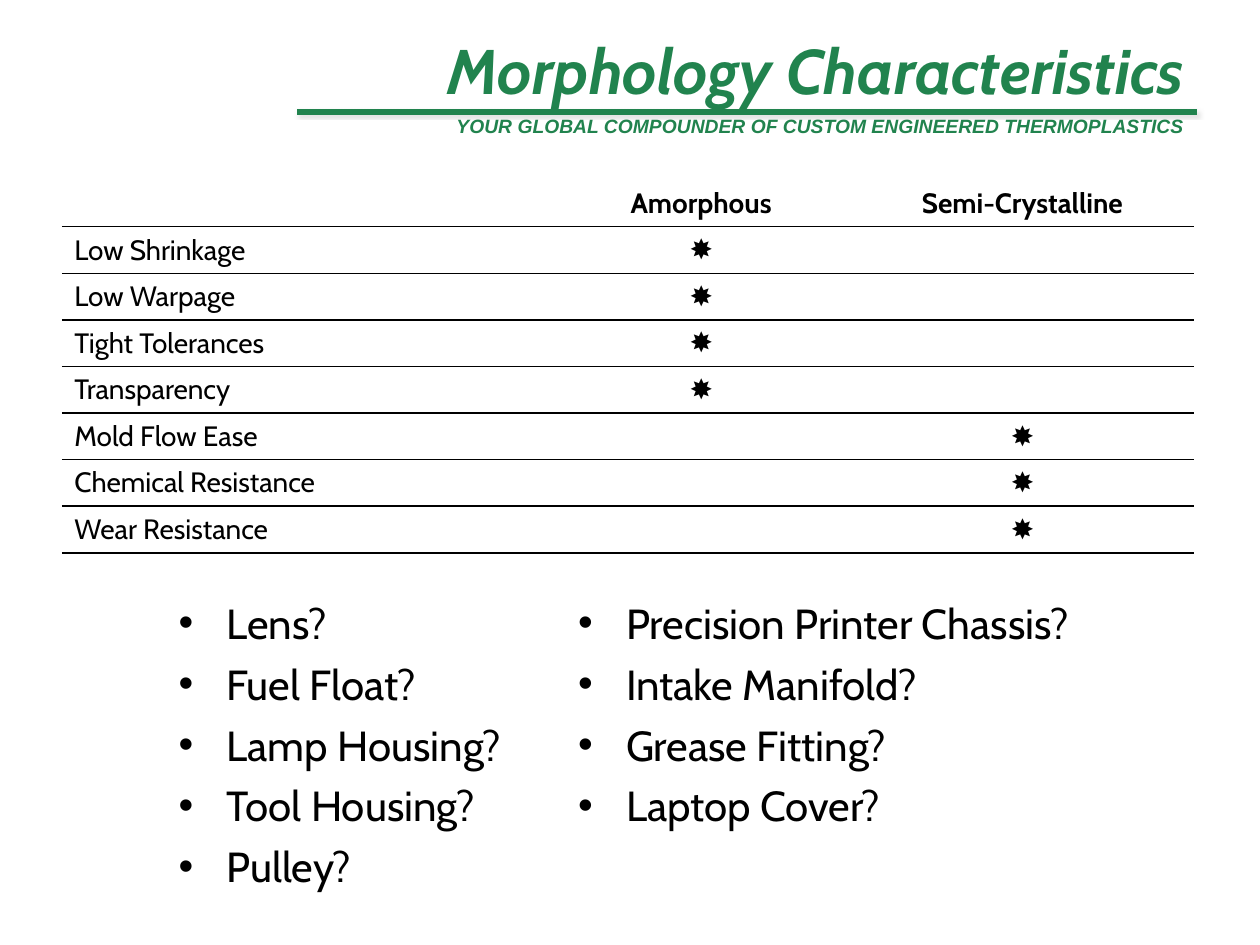
from lxml.etree import SubElement
from pptx import Presentation
from pptx.dml.color import RGBColor
from pptx.enum.shapes import MSO_CONNECTOR
from pptx.enum.text import MSO_ANCHOR, MSO_AUTO_SIZE, PP_ALIGN
from pptx.oxml import parse_xml
from pptx.oxml.ns import nsdecls, qn
from pptx.util import Pt

EMU_PER_PX = 9144
NO_STYLE_TABLE = "{2D5ABB26-0587-4C30-8999-92F81FD0307C}"


def px(length):
    return length * EMU_PER_PX


def color(value):
    return RGBColor.from_string(value)


class SlideBuilder:
    green = "21834E"
    black = "000000"
    heading_font = "Cabin"
    plain_font = "Arial"

    def __init__(self, presentation):
        self.slide = presentation.slides.add_slide(presentation.slide_layouts[5])

    def add_text(self, paragraph, text, format_values, hue, alignment=PP_ALIGN.LEFT):
        paragraph.alignment = alignment
        run = paragraph.add_run()
        run.text = text
        for name, value in format_values.items():
            setattr(run.font, name, value)
        run.font.color.rgb = color(hue)

    def title(self, box, text):
        shape = self.slide.shapes.title
        shape.left, shape.top, shape.width, shape.height = map(px, box)
        frame = shape.text_frame
        frame.auto_size = MSO_AUTO_SIZE.NONE
        frame.vertical_anchor = MSO_ANCHOR.BOTTOM
        values = {"name": self.heading_font, "size": Pt(36), "bold": True, "italic": True}
        self.add_text(frame.paragraphs[0], text, values, self.green, PP_ALIGN.RIGHT)

    def rule(self, left, right, top, shadow=False):
        line = self.slide.shapes.add_connector(
            MSO_CONNECTOR.STRAIGHT, px(left), px(top), px(right), px(top))
        line.line.color.rgb = color(self.green)
        line.line.width = Pt(3)
        effects = SubElement(line._element.spPr, qn("a:effectLst"))
        if shadow:
            effects.append(parse_xml(
                f'<a:outerShdw {nsdecls("a")} blurRad="{Pt(2)}" dist="{Pt(1)}" dir="2700000">'
                '<a:srgbClr val="808080"><a:alpha val="25000"/></a:srgbClr></a:outerShdw>'))

    def text_box(self, box):
        frame = self.slide.shapes.add_textbox(*map(px, box)).text_frame
        frame.word_wrap = True
        return frame

    def tagline(self, box, text):
        values = {"name": self.plain_font, "size": Pt(11), "bold": True, "italic": True}
        paragraph = self.text_box(box).paragraphs[0]
        self.add_text(paragraph, text, values, self.green, PP_ALIGN.RIGHT)

    def bullets(self, box, items):
        frame = self.text_box(box)
        values = {"name": self.heading_font, "size": Pt(24)}
        for index, item in enumerate(items):
            paragraph = frame.add_paragraph() if index else frame.paragraphs[0]
            if index:
                paragraph.space_before = Pt(6)
            properties = paragraph._p.get_or_add_pPr()
            properties.set("marL", str(px(38)))
            properties.set("indent", str(px(-38)))
            SubElement(properties, qn("a:buFont")).set("typeface", self.plain_font)
            SubElement(properties, qn("a:buChar")).set("char", "•")
            self.add_text(paragraph, item, values, self.black)

    def cell(self, cell, text, bold, alignment):
        cell.fill.background()
        cell.vertical_anchor = MSO_ANCHOR.MIDDLE
        cell.margin_top = cell.margin_bottom = px(5 if text else 0)
        border = parse_xml(
            f'<a:lnB {nsdecls("a")} w="{Pt(1)}"><a:solidFill>'
            f'<a:srgbClr val="{self.black}"/></a:solidFill></a:lnB>')
        cell._tc.get_or_add_tcPr().insert(0, border)
        if text:
            font = self.plain_font if text == "✸" else self.heading_font
            values = {"name": font, "size": Pt(16), "bold": bold}
            self.add_text(cell.text_frame.paragraphs[0], text, values, self.black, alignment)

    def table(self, left, top, widths, row_height, rows):
        table = self.slide.shapes.add_table(
            len(rows), len(widths), px(left), px(top),
            px(sum(widths)), px(row_height * len(rows))).table
        table.first_row = table.horz_banding = False
        table._tbl.tblPr.find(qn("a:tableStyleId")).text = NO_STYLE_TABLE
        for column, width in zip(table.columns, widths):
            column.width = px(width)
        for row, texts in zip(table.rows, rows):
            row.height = px(row_height)
            for index, (cell, text) in enumerate(zip(row.cells, texts)):
                alignment = PP_ALIGN.CENTER if index else PP_ALIGN.LEFT
                self.cell(cell, text, index > 0, alignment)


def main():
    presentation = Presentation()
    presentation.slide_width, presentation.slide_height = px(1000), px(750)
    builder = SlideBuilder(presentation)

    builder.rule(236, 950, 89)
    builder.rule(236, 950, 89, shadow=True)
    builder.tagline((236, 86, 714, 29),
                    "YOUR GLOBAL COMPOUNDER OF CUSTOM ENGINEERED THERMOPLASTICS")
    builder.title((236, 0, 714, 90), "Morphology Characteristics")

    amorphous = ["Low Shrinkage", "Low Warpage", "Tight Tolerances", "Transparency"]
    crystalline = ["Mold Flow Ease", "Chemical Resistance", "Wear Resistance"]
    rows = [("", "Amorphous", "Semi-Crystalline")]
    rows += [(trait, "✸", "") for trait in amorphous]
    rows += [(trait, "", "✸") for trait in crystalline]
    builder.table(49, 143, (389, 237, 273), 37, rows)

    columns = {
        132: ["Lens?", "Fuel Float?", "Lamp Housing?", "Tool Housing?", "Pulley?"],
        449: ["Precision Printer Chassis?", "Intake Manifold?", "Grease Fitting?",
              "Laptop Cover?"],
    }
    for left, items in columns.items():
        builder.bullets((left, 469, 442, 281), items)

    presentation.save("out.pptx")


if __name__ == "__main__":
    main()
